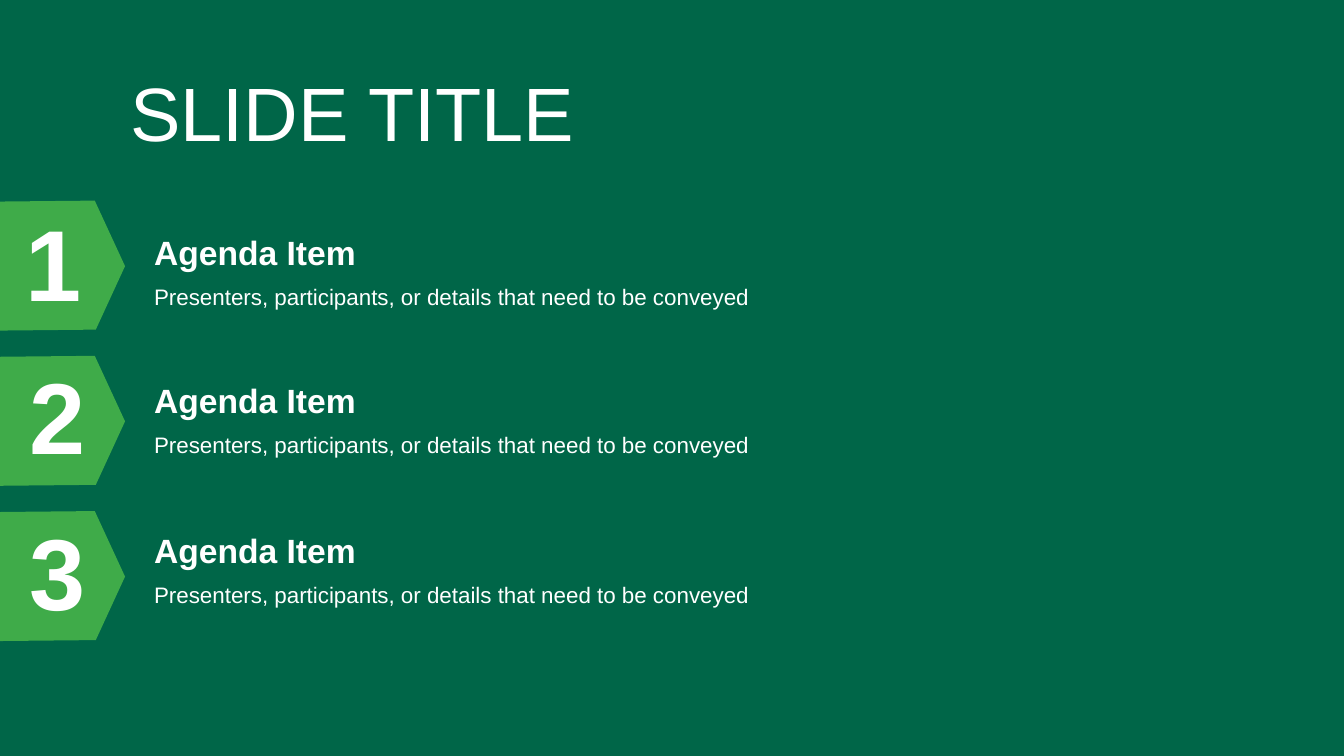
from pptx import Presentation
from pptx.dml.color import RGBColor
from pptx.enum.text import MSO_ANCHOR, MSO_AUTO_SIZE, PP_ALIGN
from pptx.util import Inches, Pt

DARK_GREEN = RGBColor(0x00, 0x66, 0x48)
LIGHT_GREEN = RGBColor(0x3F, 0xAB, 0x49)
WHITE = RGBColor(0xFF, 0xFF, 0xFF)
FONT = "Arial"

TEXT_LEFT = 1.43
MARKER_TOP, MARKER_PITCH = 1.99, 1.54
MARKER_OUTLINE = [(0.94, 0), (1.24, 0.65), (0.95, 1.28), (-0.08, 1.29), (-0.05, 0.01)]

# number, its left and top, top of the heading
AGENDA = [
    ("1", 0.15, 2.08, 2.33),
    ("2", 0.19, 3.6, 3.8),
    ("3", 0.19, 5.14, 5.29),
]
HEADING = "Agenda Item"
DETAILS = "Presenters, participants, or details that need to be conveyed"


def write(sp, text, size, bold=False, line_spacing=1.0, before=0):
    tf = sp.text_frame
    tf.word_wrap = True
    tf.auto_size = MSO_AUTO_SIZE.NONE
    tf.vertical_anchor = MSO_ANCHOR.TOP
    p = tf.paragraphs[0]
    p.alignment = PP_ALIGN.LEFT
    p.line_spacing = line_spacing
    p.space_before = Pt(before)
    r = p.add_run()
    r.text = text
    r.font.name = FONT
    r.font.size = Pt(size)
    r.font.bold = bold
    r.font.color.rgb = WHITE


def place(sp, left, top, width, height):
    sp.left, sp.top = Inches(left), Inches(top)
    sp.width, sp.height = Inches(width), Inches(height)


def add_title(slide, text):
    title = slide.shapes.title
    place(title, 1.19, 0.6, 10.92, 0.91)
    write(title, text, 54)


def add_text(slide, text, left, top, width, height, **fmt):
    box = slide.shapes.add_textbox(*map(Inches, (left, top, width, height)))
    write(box, text, before=10, **fmt)


def add_marker(slide, top):
    """Draw the arrow-shaped tab that holds an agenda number."""
    points = [(Inches(x), Inches(top + y)) for x, y in MARKER_OUTLINE]
    builder = slide.shapes.build_freeform(*points[0])
    builder.add_line_segments(points[1:], close=True)
    sp = builder.convert_to_shape()
    sp.shadow.inherit = False
    sp.fill.solid()
    sp.fill.fore_color.rgb = LIGHT_GREEN
    sp.line.fill.background()


def add_agenda_item(slide, number, left, top, heading_top):
    add_text(slide, number, left, top, 1.18, 1.24,
             size=72, bold=True, line_spacing=0.9)
    add_text(slide, HEADING, TEXT_LEFT, heading_top, 2.64, 0.46,
             size=24, bold=True, line_spacing=0.8)
    add_text(slide, DETAILS, TEXT_LEFT, heading_top + 0.46, 7.06, 0.4,
             size=16, line_spacing=0.9)


def main():
    prs = Presentation()
    prs.slide_width, prs.slide_height = Inches(13.33), Inches(7.5)
    slide = prs.slides.add_slide(prs.slide_layouts[5])
    slide.background.fill.solid()
    slide.background.fill.fore_color.rgb = DARK_GREEN
    add_title(slide, "SLIDE TITLE")
    for row, item in enumerate(AGENDA):
        add_marker(slide, MARKER_TOP + row * MARKER_PITCH)
        add_agenda_item(slide, *item)
    prs.save("out.pptx")


if __name__ == "__main__":
    main()
